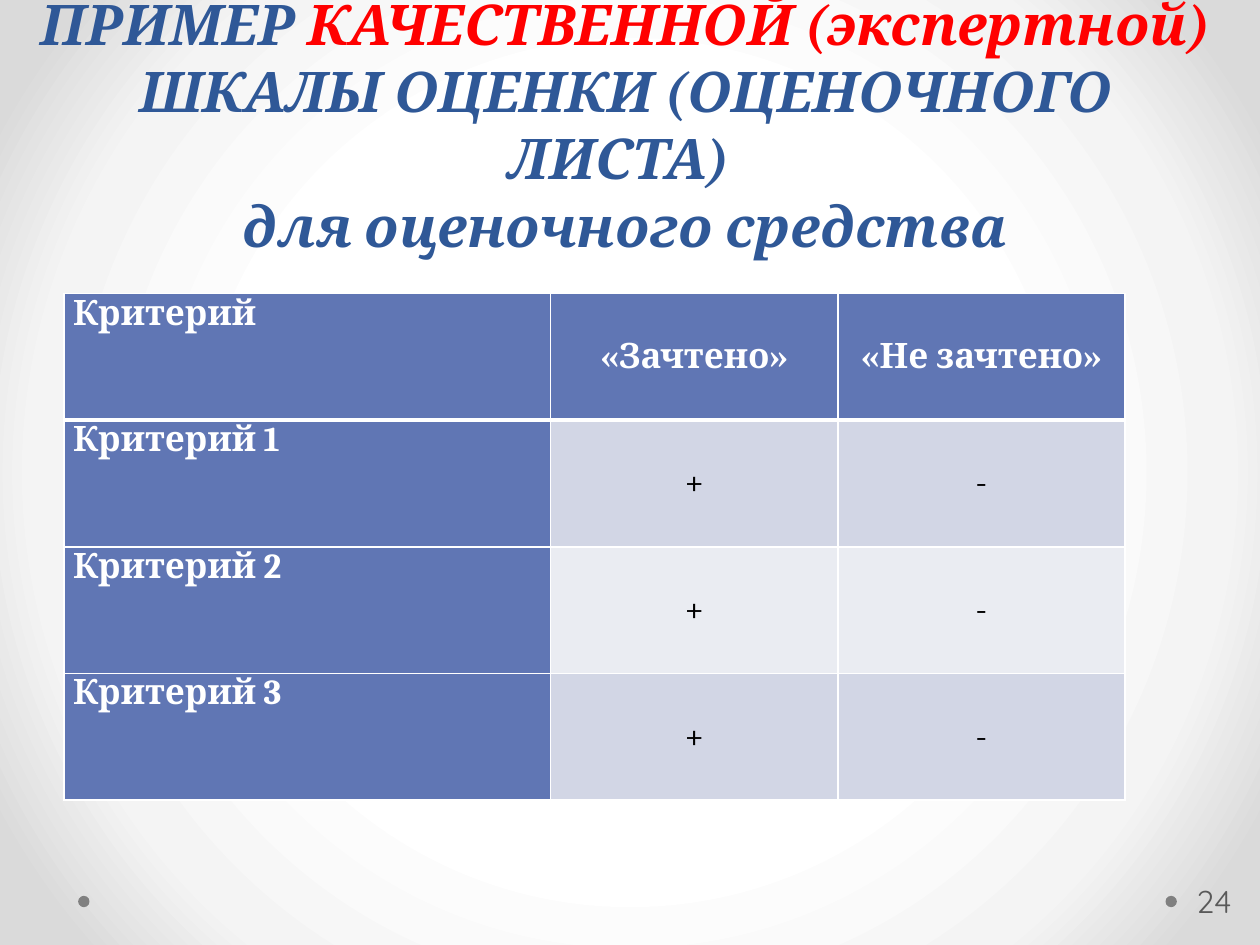
from lxml import etree
from pptx import Presentation
from pptx.dml.color import RGBColor
from pptx.enum.shapes import MSO_SHAPE
from pptx.enum.text import MSO_ANCHOR, MSO_AUTO_SIZE, PP_ALIGN
from pptx.oxml import parse_xml
from pptx.oxml.ns import nsdecls, qn
from pptx.util import Inches, Pt

COLORS = {"title": "2F5897", "accent": "FF0000", "head": "6076B4", "odd": "D2D6E5",
          "even": "EAECF2", "white": "FFFFFF", "black": "000000",
          "dot": "808080", "number": "595959"}
TITLE = [  # lines of (text, colour) runs
    [("ПРИМЕР ", "title"), ("КАЧЕСТВЕННОЙ (экспертной) ", "accent"),
     ("ШКАЛЫ ОЦЕНКИ (ОЦЕНОЧНОГО ЛИСТА) ", "title")],
    [("для оценочного средства", "title")],
]
ROWS = [
    ("Критерий", "«Зачтено»", "«Не зачтено»"),
    ("Критерий 1", "+", "-"),
    ("Критерий 2", "+", "-"),
    ("Критерий 3", "+", "-"),
]
COL_WIDTHS = (3.86, 2.28, 2.28)
ROW_HEIGHT = 1.005
DOT_LEFTS = (9.25, 0.62)
BACKGROUND = ((50, "FFFFFF"), (76, "F4F4F4"), (92, "DADADA"))


def rgb(name):
    return RGBColor.from_string(COLORS[name])


def add_run(p, text, size, color, font="Cambria", bold=False, italic=False):
    r = p.add_run()
    r.text = text
    r.font.name, r.font.size = font, Pt(size)
    r.font.bold, r.font.italic = bold, italic
    r.font.color.rgb = rgb(color)


def set_background(s):
    """Fill the slide with a gradient that spreads from its centre."""
    s.background.fill.gradient()
    grad = s.background._cSld.find(".//" + qn("a:gradFill"))
    for child in list(grad):
        grad.remove(child)
    stops = etree.SubElement(grad, qn("a:gsLst"))
    for pos, color in BACKGROUND:
        gs = etree.SubElement(stops, qn("a:gs"), pos=str(pos * 1000))
        etree.SubElement(gs, qn("a:srgbClr"), val=color)
    shade = etree.SubElement(grad, qn("a:path"))
    shade.set("path", "circle")
    etree.SubElement(shade, qn("a:fillToRect"), l="50000", t="50000", r="50000", b="50000")


def set_borders(cell, bottom):
    """Draw white borders, 1 pt except for the given bottom width."""
    tc_pr = cell._tc.get_or_add_tcPr()
    for i, (side, width) in enumerate((("L", 1), ("R", 1), ("T", 1), ("B", bottom))):
        tc_pr.insert(i, parse_xml(
            f'<a:ln{side} {nsdecls("a")} w="{Pt(width)}"><a:solidFill>'
            f'<a:srgbClr val="{COLORS["white"]}"/></a:solidFill></a:ln{side}>'))


def add_title(s):
    sp = s.shapes.title
    sp.left, sp.top, sp.width, sp.height = map(Inches, (0.12, 0.29, 9.69, 1.81))
    tf = sp.text_frame
    tf.word_wrap, tf.auto_size = True, MSO_AUTO_SIZE.NONE
    tf.vertical_anchor = MSO_ANCHOR.BOTTOM
    p = tf.paragraphs[0]
    p.alignment = PP_ALIGN.CENTER
    for i, line in enumerate(TITLE):
        if i:
            p.add_line_break()
        for text, color in line:
            add_run(p, text, 32, color, bold=True, italic=True)


def add_criteria_table(s):
    table = s.shapes.add_table(
        len(ROWS), len(COL_WIDTHS), Inches(0.51), Inches(2.33),
        Inches(sum(COL_WIDTHS)), Inches(ROW_HEIGHT * len(ROWS))).table
    table.first_col = True
    for col, width in zip(table.columns, COL_WIDTHS):
        col.width = Inches(width)
    for i, row in enumerate(ROWS):
        for j, text in enumerate(row):
            cell = table.cell(i, j)
            heading = i == 0 or j == 0
            cell.margin_left = cell.margin_right = Inches(0.07)
            cell.margin_top = cell.margin_bottom = 0
            cell.vertical_anchor = MSO_ANCHOR.MIDDLE if j else MSO_ANCHOR.TOP
            cell.fill.solid()
            cell.fill.fore_color.rgb = rgb("head" if heading else "odd" if i % 2 else "even")
            set_borders(cell, 1 if i else 3)
            p = cell.text_frame.paragraphs[0]
            p.alignment = PP_ALIGN.CENTER if j else PP_ALIGN.LEFT
            add_run(p, text, 20, "white" if heading else "black", bold=heading)


def add_footer(s):
    for left in DOT_LEFTS:
        dot = s.shapes.add_shape(MSO_SHAPE.OVAL, Inches(left), Inches(7.11),
                                 Inches(0.09), Inches(0.09))
        dot.shadow.inherit = False
        dot.fill.solid()
        dot.fill.fore_color.rgb = rgb("dot")
        dot.line.fill.background()
    tf = s.shapes.add_textbox(Inches(9.34), Inches(6.95), Inches(0.61), Inches(0.4)).text_frame
    tf.word_wrap = True
    tf.vertical_anchor = MSO_ANCHOR.MIDDLE
    tf.margin_left, tf.margin_right = Inches(0.03), Inches(0.05)
    p = tf.paragraphs[0]
    p.alignment = PP_ALIGN.CENTER
    add_run(p, "24", 18, "number", font="Quicksand")


def main():
    prs = Presentation()
    prs.slide_width, prs.slide_height = Inches(10), Inches(7.5)
    s = prs.slides.add_slide(prs.slide_layouts[5])
    set_background(s)
    add_title(s)
    add_criteria_table(s)
    add_footer(s)
    prs.save("out.pptx")


if __name__ == "__main__":
    main()
